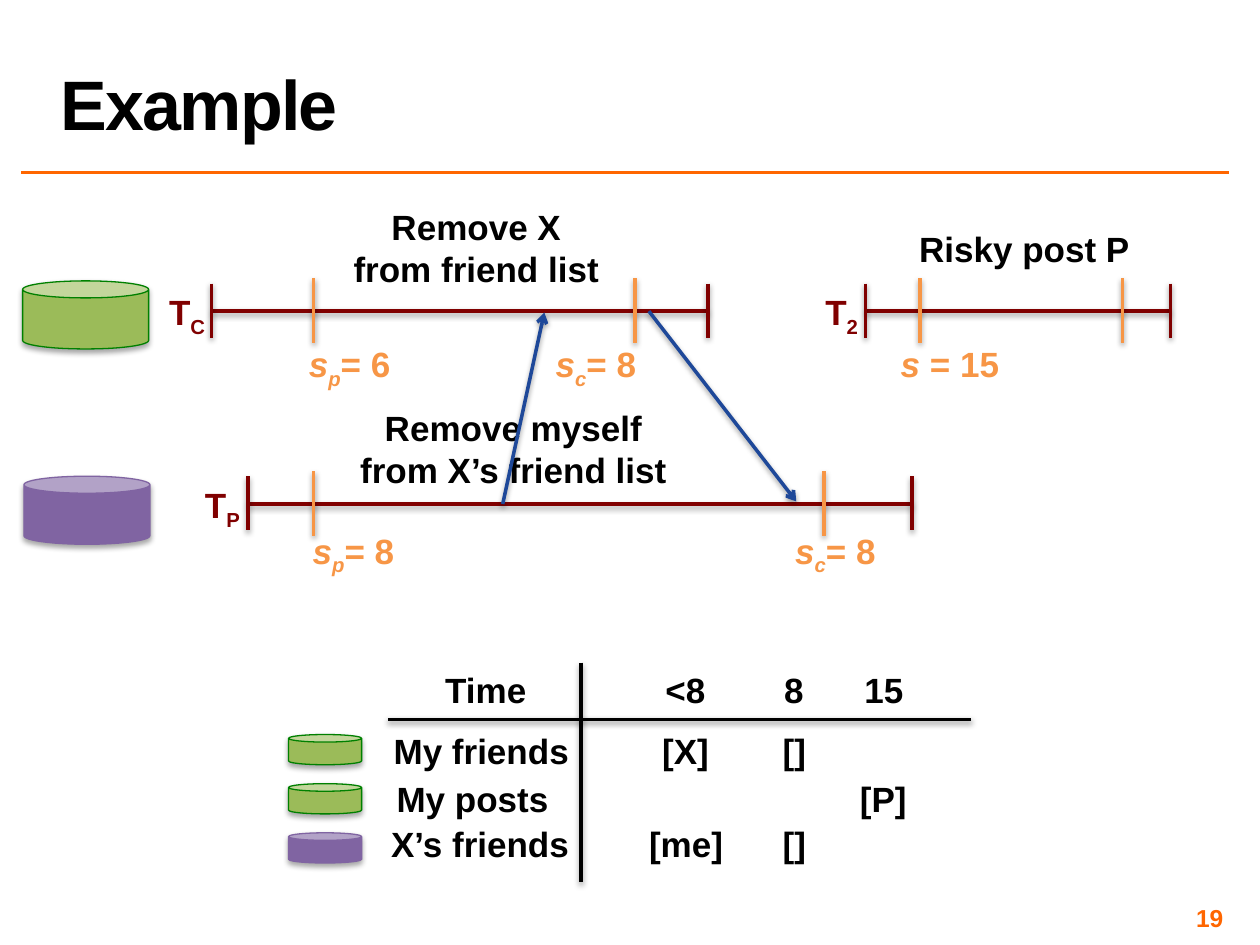
from dataclasses import dataclass

from lxml import etree
from pptx import Presentation
from pptx.dml.color import RGBColor
from pptx.enum.shapes import MSO_CONNECTOR, MSO_SHAPE
from pptx.enum.text import MSO_ANCHOR, MSO_AUTO_SIZE, PP_ALIGN
from pptx.oxml.ns import qn
from pptx.util import Pt

EMU_PER_PX = 9144
STRAIGHT = MSO_CONNECTOR.STRAIGHT
CAN = MSO_SHAPE.CAN
CENTER, LEFT, RIGHT = PP_ALIGN.CENTER, PP_ALIGN.LEFT, PP_ALIGN.RIGHT
BOTTOM, MIDDLE = MSO_ANCHOR.BOTTOM, MSO_ANCHOR.MIDDLE
FIT_SHAPE, NO_FIT = MSO_AUTO_SIZE.SHAPE_TO_FIT_TEXT, MSO_AUTO_SIZE.NONE


@dataclass(frozen=True)
class Theme:
    """Colours, font and sizes of the slide."""
    font: str = "Arial"
    ink: str = "000000"
    accent: str = "FF6600"
    timeline: str = "800000"
    mark: str = "F79646"
    arrow: str = "1E4899"
    green: str = "9BBB59"
    green_edge: str = "008000"
    purple: str = "8064A2"
    title_size: int = 40
    text_size: int = 20
    number_size: int = 14
    line_width: int = 2
    edge_width: float = 0.75


THEME = Theme()


def px(*lengths):
    """Turn px lengths into EMU."""
    return [length * EMU_PER_PX for length in lengths]


def write(frame, runs, color=THEME.ink, size=THEME.text_size, align=CENTER):
    """Write (text, italic, subscript) runs, or a plain string, as one bold paragraph."""
    paragraph = frame.paragraphs[0]
    paragraph.alignment = align
    if isinstance(runs, str):
        runs = [(runs, False, False)]
    for text, italic, subscript in runs:
        for index, line in enumerate(text.split("\n")):
            if index:
                paragraph.add_line_break()
            run = paragraph.add_run()
            run.text = line
            font = run.font
            font.name, font.size, font.bold = THEME.font, Pt(size), True
            font.italic = italic
            font.color.rgb = RGBColor.from_string(color)
            if subscript:
                run.font._element.set("baseline", "-25000")
    return paragraph


def add_effects(shape, opacity=0, distance=0):
    """Give a shape a soft shadow below it, or none when opacity is zero."""
    effects = etree.SubElement(shape.element.spPr, qn("a:effectLst"))
    if opacity:
        shadow = etree.SubElement(effects, qn("a:outerShdw"), blurRad="40000",
                                  dist=str(distance), dir="5400000", rotWithShape="0")
        color = etree.SubElement(shadow, qn("a:srgbClr"), val=THEME.ink)
        etree.SubElement(color, qn("a:alpha"), val=str(opacity * 1000))


class SlideBuilder:
    """Holds the theme and the current slide."""

    def __init__(self, slide, theme):
        """Keep the slide and its theme."""
        self.slide, self.theme = slide, theme

    def title(self, text, left, top, width, height):
        """Fill and place the title placeholder."""
        title = self.slide.shapes.title
        title.left, title.top, title.width, title.height = px(left, top, width, height)
        frame = title.text_frame
        frame.auto_size, frame.vertical_anchor = NO_FIT, BOTTOM
        paragraph = write(frame, text, size=self.theme.title_size, align=LEFT)
        paragraph.line_spacing = 0.8
        paragraph.runs[0].font._element.set("spc", "-100")

    def text(self, runs, left, top, width, height=44, wrap=False, **style):
        """Add a text box that grows with its text."""
        box = self.slide.shapes.add_textbox(*px(left, top, width, height))
        frame = box.text_frame
        frame.word_wrap, frame.auto_size = wrap, FIT_SHAPE
        write(frame, runs, **style)
        return frame

    def page_number(self, text, left, top, width, height):
        """Add the page number with narrow margins."""
        frame = self.text(text, left, top, width, height, wrap=True, align=RIGHT,
                          color=self.theme.accent, size=self.theme.number_size)
        frame.auto_size, frame.vertical_anchor = NO_FIT, MIDDLE
        frame.margin_left, frame.margin_right, frame.margin_top, frame.margin_bottom = px(4, 4, 4, 4)

    def line(self, start, end, color, arrow=False, shadow=True):
        """Add a straight line between two points."""
        line = self.slide.shapes.add_connector(STRAIGHT, *px(*start, *end))
        line.line.color.rgb = RGBColor.from_string(color)
        line.line.width = Pt(self.theme.line_width)
        if arrow:
            etree.SubElement(line.line._get_or_add_ln(), qn("a:tailEnd"), type="arrow")
        add_effects(line, 38 if shadow else 0, 20000)

    def cylinder(self, left, top, width, height, fill, edge):
        """Add a data store."""
        shape = self.slide.shapes.add_shape(CAN, *px(left, top, width, height))
        shape.fill.solid()
        shape.fill.fore_color.rgb = RGBColor.from_string(fill)
        shape.line.color.rgb = RGBColor.from_string(edge)
        shape.line.width = Pt(self.theme.edge_width)
        add_effects(shape, 35, 23000)

    def timeline(self, name, name_left, name_width, left, right, y, marks):
        """Add a named time span with end caps and timestamp marks."""
        color = self.theme.timeline
        self.line((left, y), (right, y), color)
        for x in (left, right):
            self.line((x, y - 22), (x, y + 21), color)
        for x in marks:
            self.line((x, y + 25), (x, y - 26), self.theme.mark)
        self.text([("T", False, False), (name, False, True)], name_left, y - 21,
                  name_width, wrap=True, color=color)

    def timestamp(self, subscript, value, left, top, width):
        """Add a timestamp such as s with a subscript and its value."""
        runs = [("s", True, False), (subscript, True, True), (f"= {value}", False, False)]
        self.text(runs, left, top, width, color=self.theme.mark)


def main():
    """Build and save the slide."""
    presentation = Presentation()
    presentation.slide_width, presentation.slide_height = px(1000, 750)
    slide = presentation.slides.add_slide(presentation.slide_layouts[5])
    builder = SlideBuilder(slide, THEME)
    green = (THEME.green, THEME.green_edge)
    purple = (THEME.purple, THEME.purple)

    builder.line((17, 137), (975, 137), THEME.accent, shadow=False)
    builder.title("Example", 38, 2, 937, 117)
    builder.page_number("19", 742, 717, 233, 23)

    builder.text("Remove X\nfrom friend list", 267, 158, 222, 77, wrap=True)
    builder.text("Remove myself\nfrom X’s friend list", 276, 318, 263, 77, wrap=True)
    builder.text("Risky post P", 719, 176, 188)

    for timeline in (("C", 118, 61, 168, 562, 247, (249, 504)),
                     ("2", 643, 50, 687, 929, 247, (730, 891)),
                     ("P", 146, 61, 197, 724, 400, (249, 654))):
        builder.timeline(*timeline)

    for timestamp in (("p", 6, 234, 267, 87), ("c", 8, 430, 267, 86),
                      ("p", 8, 237, 415, 87), ("c", 8, 620, 415, 86)):
        builder.timestamp(*timestamp)
    builder.text([("s ", True, False), ("= 15", False, False)], 691, 267, 126,
                 wrap=True, color=THEME.mark)

    builder.line((399, 400), (432, 248), THEME.arrow, arrow=True)
    builder.line((515, 247), (632, 398), THEME.arrow, arrow=True)
    builder.cylinder(18, 223, 100, 54, *green)
    builder.cylinder(19, 378, 100, 54, *purple)

    builder.line((308, 571), (771, 571), THEME.ink)
    builder.line((461, 526), (461, 700), THEME.ink)
    column_centers = (544, 630, 701)
    rows = (
        (526, ("Time", 343, 85), (("<8", 52), ("8", 36), ("15", 51))),
        (574, ("My friends", 302, 160), (("[X]", 58), ("[]", 39), None)),
        (612, ("My posts", 304, 142), (None, None, ("[P]", 58))),
        (648, ("X’s friends", 300, 162), (("[me]", 79), ("[]", 39), None)),
    )
    for top, (label, left, width), cells in rows:
        builder.text(label, left, top, width)
        for center, cell in zip(column_centers, cells):
            if cell:
                value, cell_width = cell
                builder.text(value, center - cell_width // 2, top, cell_width)
    for index, colors in enumerate((green, green, purple)):
        builder.cylinder(229, 583 + 39 * index, 58, 24, *colors)

    presentation.save("out.pptx")


if __name__ == "__main__":
    main()
